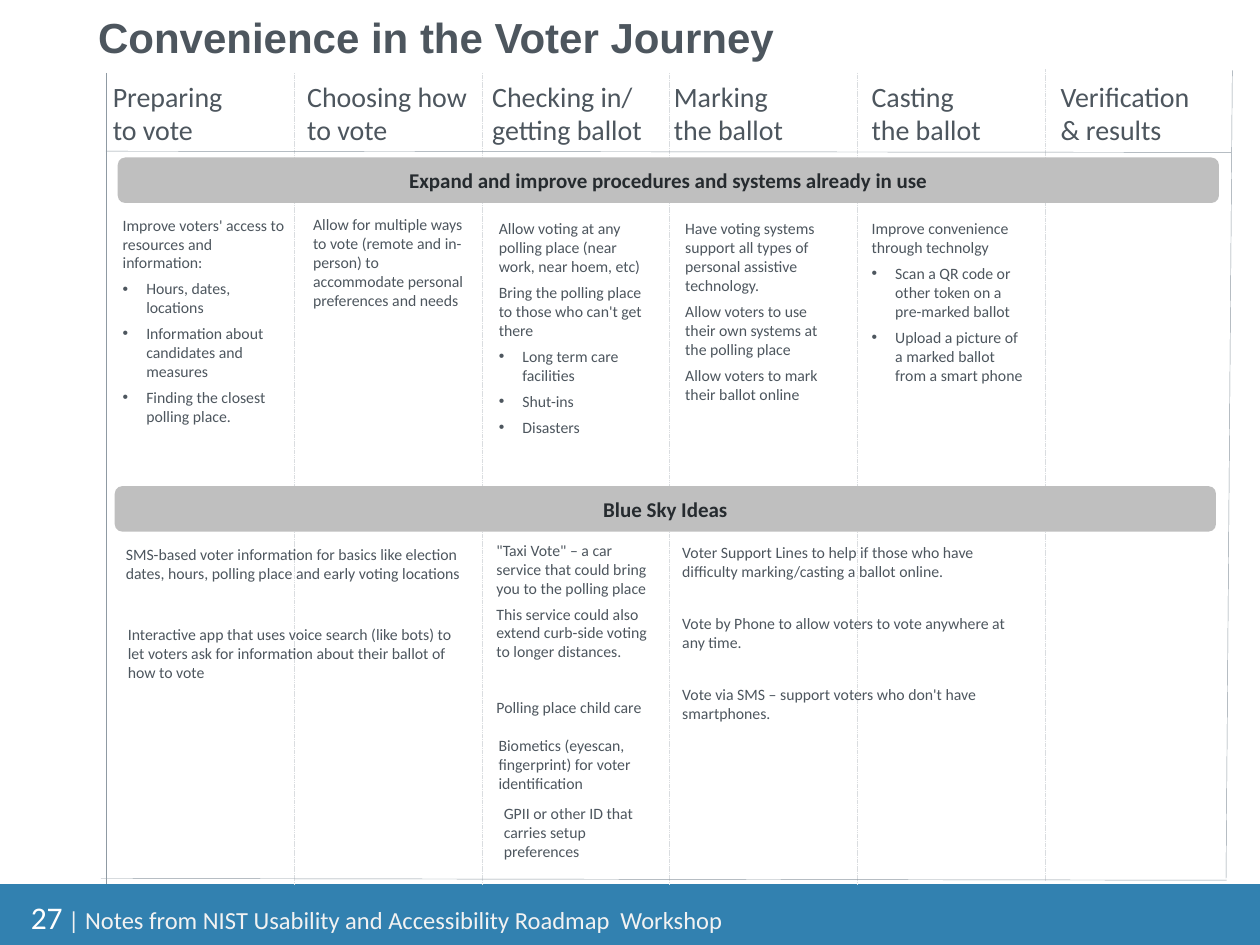
from lxml import etree
from pptx import Presentation
from pptx.dml.color import RGBColor
from pptx.enum.dml import MSO_LINE
from pptx.enum.shapes import MSO_CONNECTOR, MSO_SHAPE
from pptx.enum.text import MSO_ANCHOR, PP_ALIGN
from pptx.oxml.ns import qn
from pptx.util import Pt

RECT, ROUNDED = MSO_SHAPE.RECTANGLE, MSO_SHAPE.ROUNDED_RECTANGLE
STRAIGHT, DASH = MSO_CONNECTOR.STRAIGHT, MSO_LINE.SQUARE_DOT
TOP, MIDDLE, BOTTOM = MSO_ANCHOR.TOP, MSO_ANCHOR.MIDDLE, MSO_ANCHOR.BOTTOM
CENTER = PP_ALIGN.CENTER


def rgb(value):
    return RGBColor.from_string(value)


class Deck:
    font = "Calibri"
    ink, dark = "4D565E", "262B2F"
    blue, gray, white, pale = "3281B0", "BFBFBF", "FFFFFF", "F2F2F2"
    rule, guide = "8F9AA3", "DADDE0"

    def __init__(self, width, height):
        self.prs = Presentation()
        self.prs.slide_width, self.prs.slide_height = Pt(width), Pt(height)
        self.s = self.prs.slides.add_slide(self.prs.slide_layouts[6])

    def run(self, p, text, size, color=None, bold=False, font=None):
        r = p.add_run()
        r.text = text
        r.font.size, r.font.bold = Pt(size), bold
        r.font.name = font or self.font
        r.font.color.rgb = rgb(color or self.ink)

    def box(self, x, y, w, h, anchor=TOP):
        tf = self.s.shapes.add_textbox(Pt(x), Pt(y), Pt(w), Pt(h)).text_frame
        tf.word_wrap, tf.vertical_anchor = True, anchor
        return tf

    def shape(self, kind, x, y, w, h, fill, line=None):
        sp = self.s.shapes.add_shape(kind, Pt(x), Pt(y), Pt(w), Pt(h))
        sp.shadow.inherit = False
        sp.fill.solid()
        sp.fill.fore_color.rgb = rgb(fill)
        if line:
            sp.line.color.rgb = rgb(line)
            sp.line.width = Pt(0.75)
        else:
            sp.line.fill.background()
        return sp

    def line(self, x1, y1, x2, y2, color, dash=None):
        cx = self.s.shapes.add_connector(STRAIGHT, Pt(x1), Pt(y1), Pt(x2), Pt(y2))
        cx.line.color.rgb = rgb(color)
        cx.line.width = Pt(0.25)
        if dash:
            cx.line.dash_style = dash
        etree.SubElement(cx._element.spPr, qn("a:effectLst"))

    def band(self, x, y, text):
        sp = self.shape(ROUNDED, x, y, 629.3, 26, self.gray)
        tf = sp.text_frame
        tf.vertical_anchor = MIDDLE
        p = tf.paragraphs[0]
        p.alignment = CENTER
        self.run(p, text, 12, self.dark, bold=True)

    def heading(self, x, w, lines):
        p = self.box(x, 41.8, w, 46).paragraphs[0]
        for i, text in enumerate(lines):
            if i:
                p.add_line_break()
            self.run(p, text, 16)

    def notes(self, x, y, w, h, paragraphs, bullets=(), gap=4):
        tf = self.box(x, y, w, h)
        for i, text in enumerate([*paragraphs, *bullets]):
            p = tf.add_paragraph() if i else tf.paragraphs[0]
            if i >= len(paragraphs):
                pPr = p._p.get_or_add_pPr()
                pPr.set("marL", str(Pt(13.5)))
                pPr.set("indent", str(-Pt(13.5)))
                etree.SubElement(pPr, qn("a:buFont"), typeface="Arial")
                etree.SubElement(pPr, qn("a:buChar"), char="•")
            p.space_after = Pt(gap)
            self.run(p, text, 9)


def main():
    d = Deck(720, 540)

    # Footer
    d.shape(RECT, 0, 505.3, 720, 36, d.blue, d.blue)
    p = d.box(10.5, 509.8, 469, 29).paragraphs[0]
    d.run(p, "27", 18, d.white)
    d.run(p, " | Notes from NIST Usability and Accessibility Roadmap  Workshop", 14, d.pale)

    # Title
    p = d.box(49, 2.3, 648, 36.5, BOTTOM).paragraphs[0]
    d.run(p, "Convenience in the Voter Journey", 24, bold=True, font="Arial")

    # Grid
    d.shape(RECT, 61, 40.3, 643.7, 46, d.white)
    for i in range(5):
        x = 168.3 + 107.2 * i
        top = 39.6 if i == 4 else 41.6
        d.line(x, top, x, top + 463.7, d.guide, DASH)
    for ends in [(704.2, 40.3, 700.6, 502), (61, 41.6, 61, 505.3),
                 (57.6, 502, 701, 503), (60.5, 86.4, 703.4, 87.1)]:
        d.line(*ends, d.rule)

    # Column headings
    for x, w, lines in [
        (57.4, 122.4, ["Preparing", "to vote"]),
        (168.5, 122.4, ["Choosing how", "to vote"]),
        (274.2, 122.4, ["Checking in/", "getting ballot"]),
        (378, 95, ["Marking", "the ballot"]),
        (491, 122.4, ["Casting", "the ballot"]),
        (599, 122.4, ["Verification", "& results"]),
    ]:
        d.heading(x, w, lines)

    # Procedures already in use
    d.band(67.3, 90, "Expand and improve procedures and systems already in use")
    d.notes(63, 119.5, 109, 158,
            ["Improve voters' access to resources and information:"],
            ["Hours, dates, locations", "Information about candidates and measures",
             "Finding the closest polling place."])
    d.notes(171.8, 119, 104, 62,
            ["Allow for multiple ways to vote (remote and in-person) to accommodate "
             "personal preferences and needs"])
    d.notes(278, 121.7, 102, 132,
            ["Allow voting at any polling place (near work, near hoem, etc)",
             "Bring the polling place to those who can't get there"],
            ["Long term care facilities", "Shut-ins", "Disasters"])
    d.notes(384.5, 121.7, 102, 128,
            ["Have voting systems support all types of personal assistive technology.",
             "Allow voters to use their own systems at the polling place",
             "Allow voters to mark their ballot online"])
    d.notes(491, 121.7, 102, 102,
            ["Improve convenience through technolgy"],
            ["Scan a QR code or other token on a pre-marked ballot",
             "Upload a picture of a marked ballot from a smart phone"])

    # Blue sky ideas
    d.band(65.6, 277.8, "Blue Sky Ideas")
    d.notes(64.8, 307.5, 209.5, 29,
            ["SMS-based voter information for basics like election dates, hours, "
             "polling place and early voting locations"])
    d.notes(66, 353.3, 204.5, 40,
            ["Interactive app that uses voice search (like bots) to let voters ask "
             "for information about their ballot of how to vote"])
    d.notes(276.6, 305.3, 101.5, 77,
            ["\"Taxi Vote\" – a car service that could bring you to the polling place",
             "This service could also extend curb-side voting to longer distances."])
    d.notes(276.6, 395.3, 101.5, 18, ["Polling place child care"])
    d.notes(277.8, 416.7, 101.5, 40,
            ["Biometics (eyescan, fingerprint) for voter identification"])
    d.notes(280.8, 455.8, 101.5, 40,
            ["GPII or other ID that carries setup preferences"])
    d.notes(382.8, 306.5, 211, 111,
            ["Voter Support Lines to help if those who have difficulty "
             "marking/casting a ballot online.",
             "Vote by Phone to allow voters to vote anywhere at any time.",
             "Vote via SMS – support voters who don't have smartphones."], gap=19)

    d.prs.save("out.pptx")


if __name__ == "__main__":
    main()
